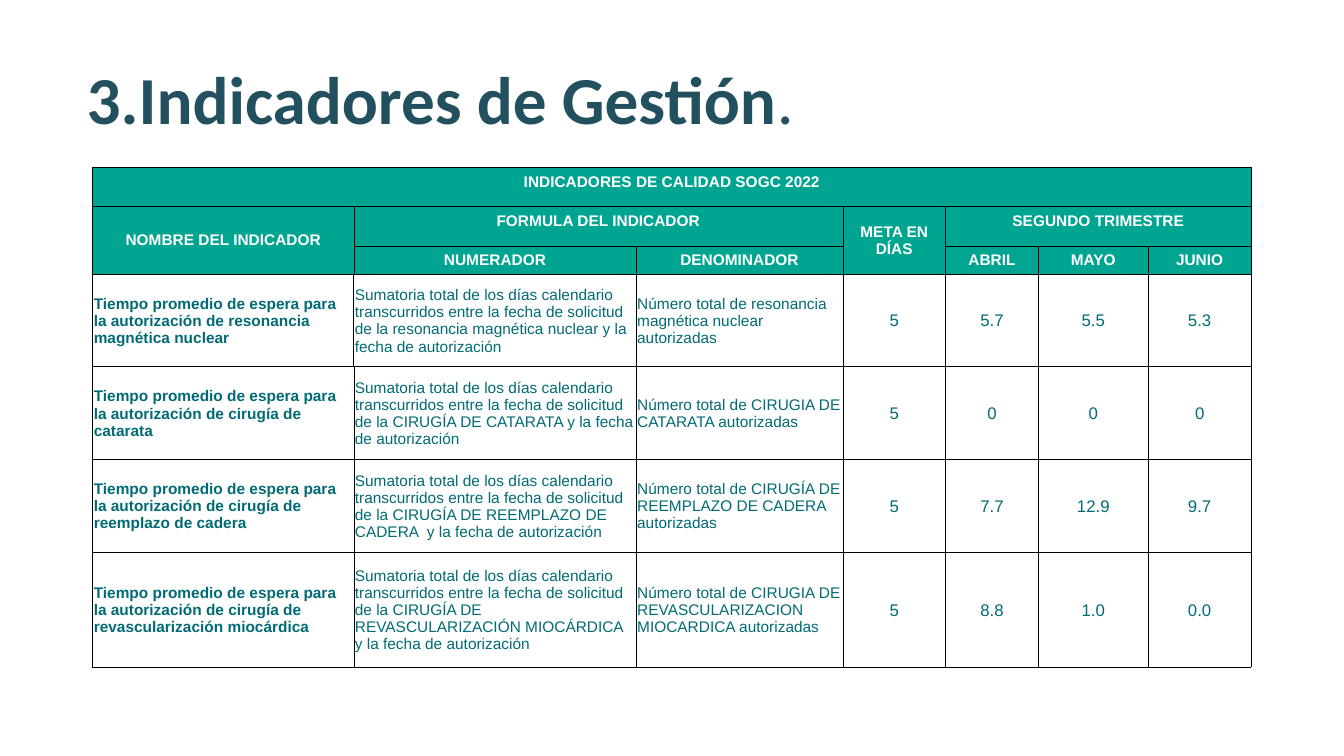
from dataclasses import dataclass
from itertools import product

from lxml.etree import SubElement
from pptx import Presentation
from pptx.dml.color import RGBColor
from pptx.enum.text import MSO_ANCHOR as Anchor, MSO_AUTO_SIZE as Fit, PP_ALIGN as Align
from pptx.oxml.ns import qn
from pptx.table import Table, _Cell as Cell
from pptx.text.text import _Paragraph as Para
from pptx.util import Inches, Pt

NAVY = RGBColor(0x23, 0x50, 0x5E)
GREEN = RGBColor(0x00, 0xA5, 0x92)
TEAL = RGBColor(0x00, 0x6B, 0x75)
WHITE = RGBColor(0xFF, 0xFF, 0xFF)
BLACK = RGBColor(0x00, 0x00, 0x00)

WIDTHS = [2.59, 2.8, 2.05, 1.02, 0.92, 1.09, 1.02]
HEIGHTS = [0.39, 0.39, 0.28, 0.92, 0.92, 0.92, 1.14]
SIDES = {"L": (0, -1), "R": (0, 1), "T": (-1, 0), "B": (1, 0)}
HEAVY = (3, 0)


@dataclass
class Head:
    row: int
    col: int
    text: str
    rows: int = 1
    cols: int = 1
    anchor: Anchor = Anchor.MIDDLE


@dataclass
class Entry:
    name: str
    upper: str
    lower: str
    values: list[str]


HEADS = [
    Head(0, 0, "INDICADORES DE CALIDAD SOGC 2022", cols=7, anchor=Anchor.TOP),
    Head(1, 0, "NOMBRE DEL INDICADOR", rows=2),
    Head(1, 1, "FORMULA DEL INDICADOR", cols=2, anchor=Anchor.TOP),
    Head(1, 3, "META EN DÍAS", rows=2),
    Head(1, 4, "SEGUNDO TRIMESTRE", cols=3, anchor=Anchor.TOP),
    Head(2, 1, "NUMERADOR"),
    Head(2, 2, "DENOMINADOR"),
    Head(2, 4, "ABRIL"),
    Head(2, 5, "MAYO"),
    Head(2, 6, "JUNIO"),
]

NAME = "Tiempo promedio de espera para la autorización de "
SUM = "Sumatoria total de los días calendario transcurridos entre la fecha de solicitud de la "
COUNT = "Número total de "
ENTRIES = [
    Entry("resonancia magnética nuclear",
          "resonancia magnética nuclear y la fecha de autorización",
          "resonancia magnética nuclear autorizadas",
          ["5", "5.7", "5.5", "5.3"]),
    Entry("cirugía de catarata",
          "CIRUGÍA DE CATARATA y la fecha de autorización",
          "CIRUGIA DE CATARATA autorizadas",
          ["5", "0", "0", "0"]),
    Entry("cirugía de reemplazo de cadera",
          "CIRUGÍA DE REEMPLAZO DE CADERA  y la fecha de autorización",
          "CIRUGÍA DE REEMPLAZO DE CADERA autorizadas",
          ["5", "7.7", "12.9", "9.7"]),
    Entry("cirugía de revascularización miocárdica",
          "CIRUGÍA DE REVASCULARIZACIÓN MIOCÁRDICA y la fecha de autorización",
          "CIRUGIA DE REVASCULARIZACION MIOCARDICA autorizadas",
          ["5", "8.8", "1.0", "0.0"]),
]


def add_run(para: Para, text: str, face: str, size: float, color: RGBColor, bold: bool) -> None:
    run = para.add_run()
    run.text = text
    run.font.name = face
    run.font.size = Pt(size)
    run.font.bold = bold
    run.font.color.rgb = color


def pad(cell: Cell, side: float, top: float, base: float) -> None:
    cell.margin_left = cell.margin_right = Inches(side)
    cell.margin_top = Inches(top)
    cell.margin_bottom = Inches(base)


def border(cell: Cell, row: int, col: int) -> None:
    props = cell._tc.get_or_add_tcPr()
    for side, (down, across) in SIDES.items():
        near = (row + down, col + across)
        width = Pt(1) if HEAVY in ((row, col), near) else Pt(0.5)
        line = SubElement(props, qn(f"a:ln{side}"), w=str(width))
        fill = SubElement(line, qn("a:solidFill"))
        SubElement(fill, qn("a:srgbClr"), val=str(BLACK))


def write(cell: Cell, text: str, size: float, color: RGBColor, bold: bool, align: Align) -> None:
    para = cell.text_frame.paragraphs[0]
    para.alignment = align
    add_run(para, text, "Arial", size, color, bold)


def fill_heads(table: Table) -> None:
    for head in HEADS:
        cell = table.cell(head.row, head.col)
        if head.rows * head.cols > 1:
            cell.merge(table.cell(head.row + head.rows - 1, head.col + head.cols - 1))
        if head.row < 2:
            pad(cell, 0.11, 0.06, 0.06)
        cell.vertical_anchor = head.anchor
        write(cell, head.text, 11, WHITE, True, Align.CENTER)


def fill_rows(table: Table) -> None:
    for row, entry in enumerate(ENTRIES, 3):
        texts = [NAME + entry.name, SUM + entry.upper, COUNT + entry.lower]
        for col, text in enumerate(texts):
            write(table.cell(row, col), text, 11, TEAL, col == 0, Align.LEFT)
        for col, value in enumerate(entry.values, len(texts)):
            write(table.cell(row, col), value, 12, TEAL, False, Align.CENTER)


def main() -> None:
    deck = Presentation()
    deck.slide_width, deck.slide_height = Inches(13.33), Inches(7.5)
    slide = deck.slides.add_slide(deck.slide_layouts[5])

    title = slide.shapes.title
    title.left, title.top = Inches(0.76), Inches(0.52)
    title.width, title.height = Inches(7.6), Inches(0.91)
    frame = title.text_frame
    frame.auto_size = Fit.NONE
    frame.word_wrap = True
    frame.vertical_anchor = Anchor.TOP
    para = frame.paragraphs[0]
    para.alignment = Align.LEFT
    add_run(para, "3.Indicadores de Gestión", "Calibri", 48, NAVY, True)
    add_run(para, ".", "Calibri", 48, NAVY, False)

    table = slide.shapes.add_table(
        len(HEIGHTS), len(WIDTHS), Inches(0.92), Inches(1.66),
        Inches(sum(WIDTHS)), Inches(sum(HEIGHTS))).table
    table.first_row = table.horz_banding = False
    for part, width in zip(table.columns, WIDTHS):
        part.width = Inches(width)
    for part, height in zip(table.rows, HEIGHTS):
        part.height = Inches(height)
    for row, col in product(range(len(HEIGHTS)), range(len(WIDTHS))):
        cell = table.cell(row, col)
        border(cell, row, col)
        pad(cell, 0.01, 0.01, 0)
        cell.vertical_anchor = Anchor.MIDDLE
        if row < 3:
            cell.fill.solid()
            cell.fill.fore_color.rgb = GREEN
        else:
            cell.fill.background()
    fill_heads(table)
    fill_rows(table)
    deck.save("out.pptx")


if __name__ == "__main__":
    main()
